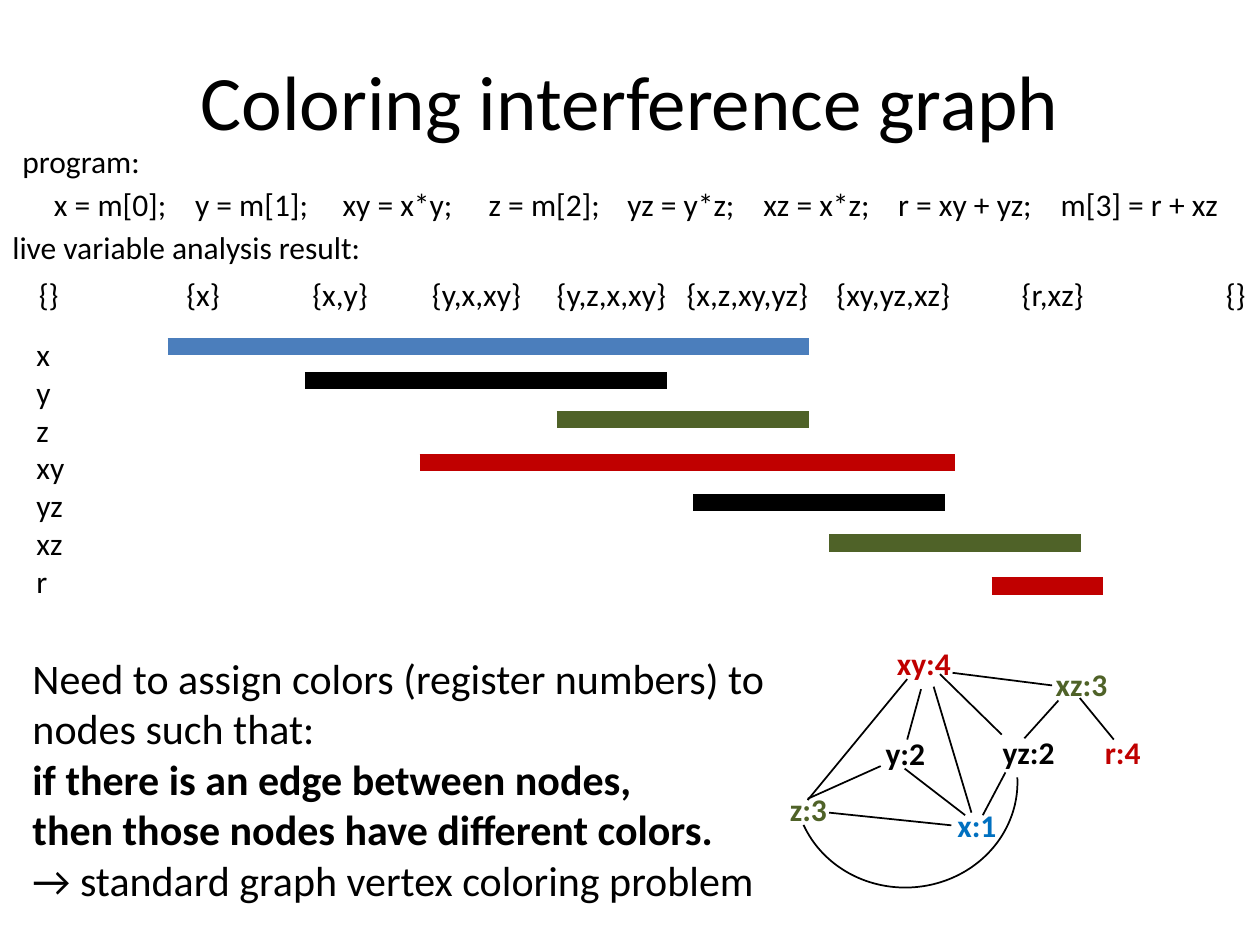
from lxml.etree import SubElement
from pptx import Presentation
from pptx.dml.color import RGBColor
from pptx.enum.shapes import MSO_CONNECTOR, MSO_SHAPE
from pptx.enum.text import MSO_ANCHOR, PP_ALIGN
from pptx.oxml.ns import qn
from pptx.util import Inches, Pt

BLACK, BLUE, GREEN, RED = "000000", "4B7EBC", "4F6228", "C00000"
NODE_BLUE = "0070C0"

STATEMENTS = [("x = m[0];", 0.43), ("y = m[1];", 1.55), ("xy = x*y;", 2.72),
              ("z = m[2];", 3.88), ("yz = y*z;", 4.98), ("xz = x*z;", 6.06),
              ("r = xy + yz;", 7.13), ("m[3] = r + xz", 8.42)]
LIVE_SETS = [("{}", 0.31), ("{x}", 1.48), ("{x,y}", 2.48), ("{y,x,xy}", 3.43),
             ("{y,z,x,xy}", 4.42), ("{x,z,xy,yz}", 5.45), ("{xy,yz,xz}", 6.64),
             ("{r,xz}", 8.11), ("{}", 9.73)]
RANGES = [("x", 1.14, 6.23, 0.14, BLUE), ("y", 2.23, 5.1, 0.41, BLACK),
          ("z", 4.23, 6.23, 0.72, GREEN), ("xy", 3.14, 7.39, 1.06, RED),
          ("yz", 5.31, 7.31, 1.38, BLACK), ("xz", 6.39, 8.39, 1.7, GREEN),
          ("r", 7.68, 8.56, 2.04, RED)]
NODES = [("y:2", 0.76, 0.72, 0.52, BLACK), ("yz:2", 1.69, 0.71, 0.62, BLACK),
         ("x:1", 1.33, 1.29, 0.52, NODE_BLUE), ("z:3", 0, 1.16, 0.5, GREEN),
         ("xz:3", 2.11, 0.17, 0.62, GREEN), ("xy:4", 0.85, 0, 0.63, RED),
         ("r:4", 2.5, 0.71, 0.49, RED)]
EDGES = [(1.24, 0.39, 1.54, 1.39), (1.38, 1.49, 0.41, 1.39), (1.01, 1.04, 1.49, 1.41),
         (1.14, 0.41, 1.03, 0.81), (0.24, 1.28, 0.82, 1.02), (1.03, 0.33, 0.24, 1.29),
         (1.29, 0.29, 1.78, 0.77), (1.81, 1.07, 1.63, 1.41), (1.39, 0.28, 2.18, 0.38),
         (2.23, 0.5, 1.96, 0.8), (2.4, 0.48, 2.67, 0.81)]


def rgb(color):
    """Turn a hex string into a colour."""
    return RGBColor.from_string(color)


def add_text(shapes, x, y, w, h, paragraphs, size=18, color=BLACK, bold=False,
             align=PP_ALIGN.LEFT, anchor=MSO_ANCHOR.TOP, wrap=True):
    """Add a text box; each paragraph is a string or a list of (text, bold) lines."""
    sp = shapes.add_textbox(Inches(x), Inches(y), Inches(w), Inches(h))
    tf = sp.text_frame
    tf.word_wrap, tf.vertical_anchor = wrap, anchor
    for i, lines in enumerate(paragraphs):
        p = tf.add_paragraph() if i else tf.paragraphs[0]
        p.alignment = align
        if isinstance(lines, str):
            lines = [(lines, bold)]
        for j, (text, strong) in enumerate(lines):
            if j:
                p.add_line_break()
            r = p.add_run()
            r.text = text
            r.font.name, r.font.size, r.font.bold = "Calibri", Pt(size), strong
            r.font.color.rgb = rgb(color)
    return sp


def add_line(shapes, x1, y1, x2, y2, color=BLACK, width=1):
    """Add a straight line without shadow."""
    cx = shapes.add_connector(MSO_CONNECTOR.STRAIGHT, Inches(x1), Inches(y1),
                              Inches(x2), Inches(y2))
    cx.line.color.rgb = rgb(color)
    cx.line.width = Pt(width)
    SubElement(cx._element.spPr, qn("a:effectLst"))


def add_tabbed_row(shapes, x, y, w, h, entries):
    """Add one line of text whose entries start at tab stops."""
    sp = add_text(shapes, x, y, w, h, ["\t".join(text for text, _ in entries)])
    pPr = sp.text_frame.paragraphs[0]._p.get_or_add_pPr()
    tabs = SubElement(pPr, qn("a:tabLst"))
    start = entries[0][1]
    for _, stop in entries[1:]:
        SubElement(tabs, qn("a:tab"), pos=str(Inches(stop - start)), algn="l")


def add_program(shapes, x, y, w):
    """Add the program and its live variable sets."""
    add_text(shapes, x + 0.08, y, 3, 0.4, ["program:"])
    add_tabbed_row(shapes, x + 0.33, y + 0.34, w - 0.42, 0.4, STATEMENTS)
    add_text(shapes, x, y + 0.68, 3, 0.4, ["live variable analysis result:"])
    add_tabbed_row(shapes, x + 0.21, y + 1.05, w - 0.21, 0.4, LIVE_SETS)


def add_live_ranges(shapes, x, y, w, h):
    """Add the variable names and a bar for each live range."""
    add_text(shapes, x, y, w, h, [name for name, *_ in RANGES], wrap=False)
    for _, start, end, top, color in RANGES:
        add_line(shapes, x + start, y + top, x + end, y + top, color, 10)


def add_rule(shapes, x, y, w, h):
    """Add the statement of the colouring problem."""
    add_text(shapes, x, y, w, h, [
        [("Need to assign colors (register numbers) to", False),
         ("nodes such that:", False),
         ("if there is an edge between nodes,", True),
         ("then those nodes have different colors.", True)],
        "→ standard graph vertex coloring problem"], size=24)


def add_graph(shapes, x, y):
    """Add the coloured interference graph as a group."""
    graph = shapes.add_group_shape().shapes
    for text, left, top, w, color in NODES:
        add_text(graph, x + left, y + top, w, 0.4, [text], color=color, bold=True, wrap=False)
    for x1, y1, x2, y2 in EDGES:
        add_line(graph, x + x1, y + y1, x + x2, y + y2)
    arc = graph.add_shape(MSO_SHAPE.ARC, Inches(x + 0.19), Inches(y + 0.27),
                          Inches(1.66), Inches(1.77))
    arc.adjustments[0], arc.adjustments[1] = 162, 42.39
    arc.rotation = 87.1
    arc.shadow.inherit = False
    arc.fill.background()
    arc.line.color.rgb = rgb(BLACK)
    arc.line.width = Pt(1)


def main():
    """Build and save the slide."""
    prs = Presentation()
    prs.slide_width, prs.slide_height = Inches(10), Inches(7.5)
    s = prs.slides.add_slide(prs.slide_layouts[6])
    add_text(s.shapes, 0.5, 0.3, 9, 0.98, ["Coloring interference graph"], size=44,
             align=PP_ALIGN.CENTER, anchor=MSO_ANCHOR.MIDDLE)
    add_program(s.shapes, 0, 1.08, 10)
    add_live_ranges(s.shapes, 0.19, 2.61, 0.42, 2.22)
    add_rule(s.shapes, 0.16, 5.13, 6.1, 2.12)
    add_graph(s.shapes, 6.17, 5.06)
    prs.save("out.pptx")


if __name__ == "__main__":
    main()
